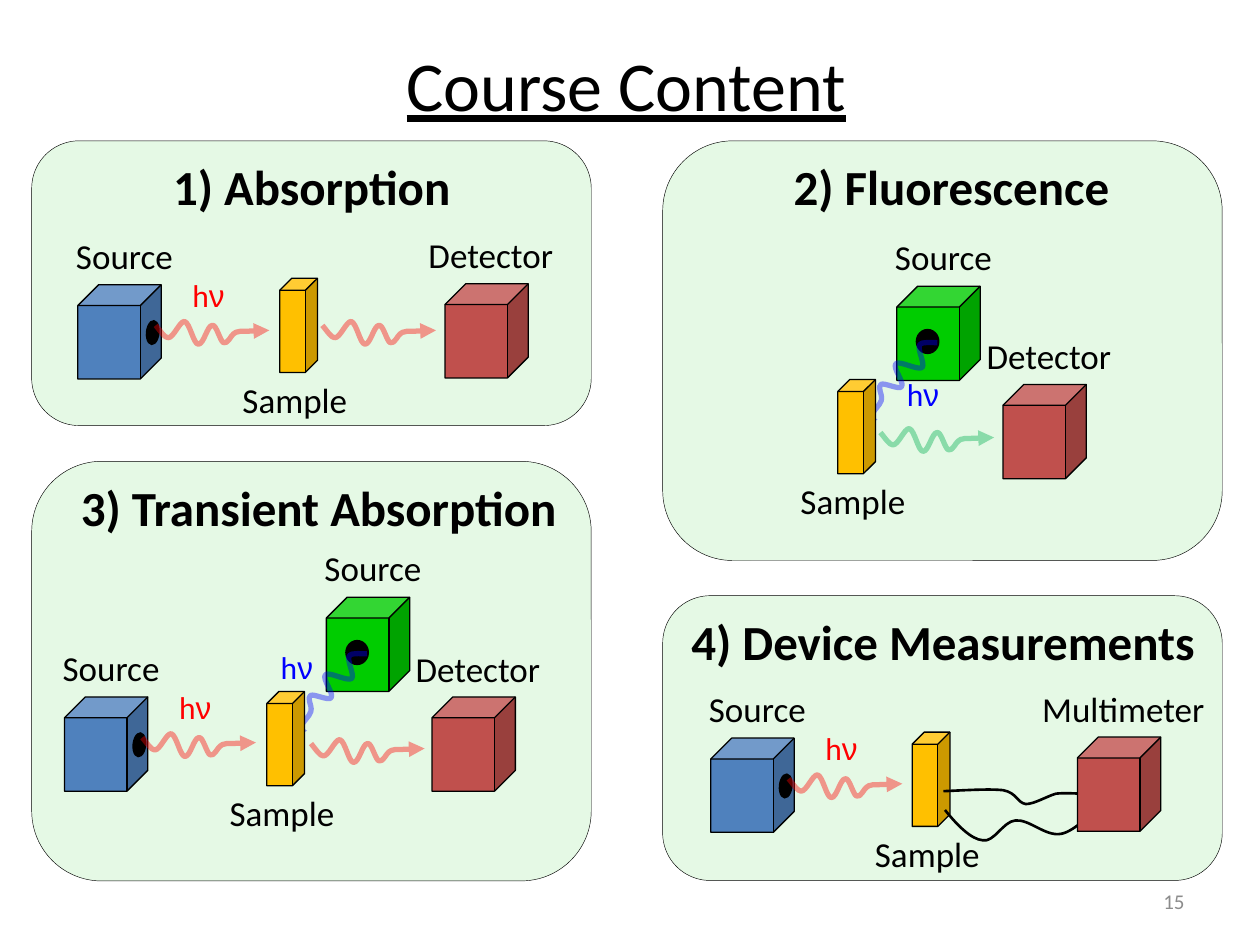
from lxml.etree import SubElement
from pptx import Presentation
from pptx.dml.color import RGBColor
from pptx.enum.shapes import MSO_SHAPE
from pptx.enum.text import MSO_ANCHOR, PP_ALIGN
from pptx.oxml.ns import qn
from pptx.util import Cm, Pt

rgb = RGBColor.from_string

prs = Presentation()
prs.slide_width, prs.slide_height = Cm(25.4), Cm(19.05)
s = prs.slides.add_slide(prs.slide_layouts[5])


def add_text(text, x, y, w, h, sp=None, size=20, color="000000", bold=None,
             underline=None, align=PP_ALIGN.CENTER, wrap=True, greek=""):
    sp = sp or s.shapes.add_textbox(0, 0, 0, 0)
    sp.left, sp.top, sp.width, sp.height = Cm(x), Cm(y), Cm(w), Cm(h)
    tf = sp.text_frame
    tf.word_wrap = wrap
    p = tf.paragraphs[0]
    p.alignment = align
    for part, font in ((text, "Calibri"), (greek, "Arial")):
        if part:
            r = p.add_run()
            r.text = part
            r.font.name = font
            r.font.size = Pt(size)
            r.font.bold = bold
            r.font.underline = underline
            r.font.color.rgb = rgb(color)
    return sp


def add_curve(points, x=0, y=0, color="000000", width=1.5, rotation=0, arrow=False):
    places = [(Cm(x + px), Cm(y + py)) for px, py in points]
    builder = s.shapes.build_freeform(*places[0])
    builder.add_line_segments(places[1:], close=False)
    sp = builder.convert_to_shape()
    outline = next(sp._element.iter(qn("a:path")))
    ends = [line[0] for line in outline.findall(qn("a:lnTo"))]
    for line in outline.findall(qn("a:lnTo")):
        outline.remove(line)
    for i in range(0, len(ends), 3):
        SubElement(outline, qn("a:cubicBezTo")).extend(ends[i:i + 3])
    sp.shadow.inherit = False
    sp.rotation = rotation
    sp.fill.background()
    sp.line.color.rgb = rgb(color)
    sp.line.width = Pt(width)
    if arrow:
        SubElement(next(sp._element.iter(qn("a:srgbClr"))), qn("a:alpha"), val="40000")
        SubElement(next(sp._element.iter(qn("a:ln"))), qn("a:headEnd"), type="triangle")


title = add_text("Course Content", 2.92, 0.71, 19.41, 1.96, sp=s.shapes.title,
                 size=40, underline=True)
title.text_frame.vertical_anchor = MSO_ANCHOR.MIDDLE

panels = [
    ("1) Absorption", 0.64, 2.84, 5.74, 3.2, 6.17),
    ("2) Fluorescence", 13.36, 2.84, 8.46, 15.7, 6.96),
    ("3) Transient Absorption", 0.64, 9.3, 8.46, 1.32, 10.21),
    ("4) Device Measurements", 13.36, 12.01, 5.74, 13.61, 10.8),
]
for heading, x, y, h, text_x, text_w in panels:
    sp = s.shapes.add_shape(MSO_SHAPE.ROUNDED_RECTANGLE, Cm(x), Cm(y), Cm(11.28), Cm(h))
    sp.shadow.inherit = False
    sp.fill.solid()
    sp.fill.fore_color.rgb = rgb("00CC00")
    SubElement(next(sp._element.iter(qn("a:srgbClr"))), qn("a:alpha"), val="10000")
    sp.line.color.rgb = rgb("000000")
    sp.line.width = Pt(0.25)
    add_text(heading, text_x, y + 0.2, text_w, 1.45, size=28, bold=True, wrap=False)

wave = [
    (2.29, 0.18),
    (2.29, 0.18), (1.83, 0.2), (1.7, 0.2),
    (1.6, 0.23), (1.63, 0.2), (1.57, 0.25),
    (1.52, 0.28), (1.45, 0.46), (1.37, 0.43),
    (1.3, 0.41), (1.22, 0.05), (1.14, 0.08),
    (1.04, 0.08), (0.97, 0.46), (0.86, 0.46),
    (0.76, 0.46), (0.69, 0.03), (0.58, 0),
    (0.48, 0), (0.36, 0.33), (0.25, 0.33),
    (0.18, 0.33), (0.1, 0.2), (0, 0.08),
]
wires = [
    [(19.05, 16.33),
     (19.3, 16.64), (19.58, 16.92), (19.81, 16.94),
     (20.04, 16.99), (20.22, 16.56), (20.47, 16.54),
     (20.75, 16.51), (21.08, 16.87), (21.39, 16.81),
     (21.67, 16.76), (22.02, 16.36), (22.17, 16.28),
     (22.33, 16.18), (22.33, 16.21), (22.3, 16.23)],
    [(19.02, 15.95),
     (19.48, 15.93), (19.94, 15.9), (20.22, 15.93),
     (20.5, 15.98), (20.5, 16.18), (20.68, 16.21),
     (20.85, 16.21), (21.11, 16.05), (21.29, 16),
     (21.46, 15.98), (21.72, 16), (21.82, 16),
     (21.89, 16), (21.89, 16), (21.89, 16)],
]

# kind: fill, cube width, label offset and width, opening (dx, dy, w, h, rotation),
kinds = {
    "pump": ("00CC00", 1.68, -0.48, -1.15, 2.84, (0.38, 0.86, 0.48, 0.51, 0)),
    "sample": ("FFC000", 0.76, -1.37, 1.9, 3.35, None),
    "lamp": ("4F81BD", 1.68, -0.48, -1.14, 2.84, (1.37, 0.71, 0.28, 0.51, 5.7)),
    "detector": ("C0504D", 1.68, -1.02, -1.13, 3.89, None),
}
beams = {"pump": (-1.17, 1.7, "0000FF", 129.2), "lamp": (1.57, 0.74, "FF0000", 0)}
parts = [
    ("pump", "Source", 18.08, 5.77),
    ("pump", "Source", 6.58, 12.04),
    ("sample", "Sample", 5.64, 5.61),
    ("sample", "Sample", 16.89, 7.65),
    ("sample", "Sample", 5.38, 13.94),
    ("sample", "Sample", 18.39, 14.76),
    ("lamp", "Source", 1.57, 5.74),
    ("lamp", "Source", 1.3, 14.05),
    ("lamp", "Source", 14.33, 14.88),
    ("detector", "Detector", 8.97, 5.72),
    ("detector", "Detector", 20.22, 7.75),
    ("detector", "Detector", 8.71, 14.05),
    ("detector", "Multimeter", 21.72, 14.86),
]
for kind, label, x, y in parts:
    color, w, label_dx, label_dy, label_w, opening = kinds[kind]
    if label == "Multimeter":
        for wire in wires:
            add_curve(wire)
    sp = s.shapes.add_shape(MSO_SHAPE.CUBE, Cm(x), Cm(y), Cm(w), Cm(1.9))
    sp.adjustments[0] = 0.32 if kind == "sample" else 0.25
    sp.shadow.inherit = False
    sp.fill.solid()
    sp.fill.fore_color.rgb = rgb(color)
    sp.line.color.rgb = rgb("000000")
    sp.line.width = Pt(0)
    add_text(label, x + label_dx, y + label_dy, label_w, 1.12)
    if opening:
        dx, dy, w, h, rotation = opening
        sp = s.shapes.add_shape(MSO_SHAPE.OVAL, Cm(x + dx), Cm(y + dy), Cm(w), Cm(h))
        sp.rotation = rotation
        sp.shadow.inherit = False
        sp.fill.solid()
        sp.fill.fore_color.rgb = rgb("000000")
        sp.line.fill.background()
        dx, dy, color, rotation = beams[kind]
        add_curve(wave, x + dx, y + dy, color, 3, rotation, arrow=True)
    if kind == "lamp":
        add_text("h", x + 2.06, y - 0.3, 1.47, 1.02, size=18, color="FF0000",
                 align=PP_ALIGN.LEFT, greek="ν")

for x, y, color in [(6.5, 6.48, "FF0000"), (17.75, 8.64, "00B050"), (6.27, 14.91, "FF0000")]:
    add_curve(wave, x, y, color, 3, arrow=True)
for x, y in [(18.03, 7.44), (5.41, 12.93)]:
    add_text("h", x, y, 1.27, 1.02, size=18, color="0000FF", align=PP_ALIGN.LEFT, greek="ν")

number = add_text("15", 18.21, 17.65, 5.92, 1.02, size=12, color="8C8C8C", align=PP_ALIGN.RIGHT)
number.text_frame.vertical_anchor = MSO_ANCHOR.MIDDLE

prs.save("out.pptx")
